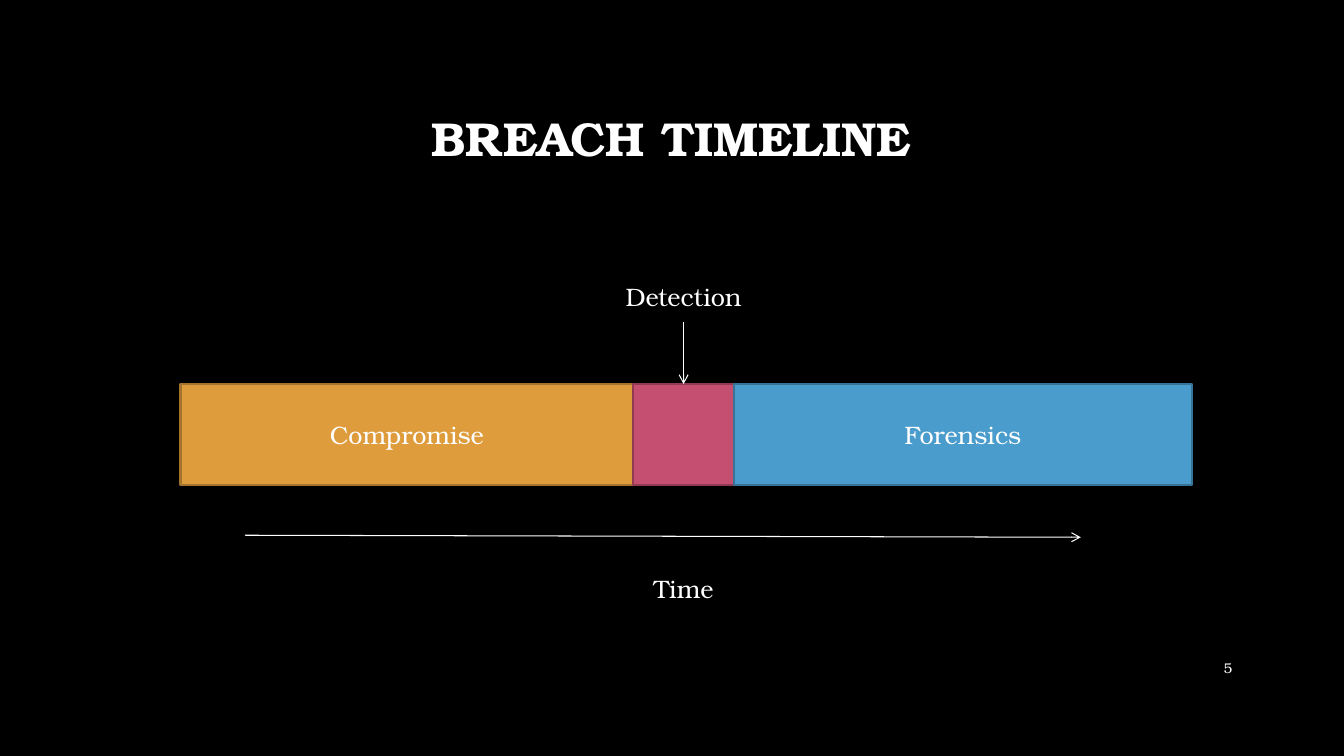
from dataclasses import dataclass
from itertools import accumulate

from lxml.etree import SubElement
from pptx import Presentation
from pptx.dml.color import RGBColor
from pptx.enum.shapes import MSO_CONNECTOR, MSO_SHAPE
from pptx.enum.text import MSO_ANCHOR, PP_ALIGN
from pptx.oxml.ns import qn
from pptx.shapes.autoshape import Shape
from pptx.shapes.connector import Connector
from pptx.slide import Slide
from pptx.util import Emu, Pt

PX_PER_INCH = 100
EMU_PER_PX = 914400 // PX_PER_INCH


@dataclass(frozen=True)
class Theme:
    font: str = "TeX Gyre Bonum"
    background: str = "000000"
    foreground: str = "FFFFFF"
    compromise: str = "DE9C3C"
    compromise_edge: str = "A4732C"
    detection: str = "C54F71"
    detection_edge: str = "923A54"
    forensics: str = "4A9CCC"
    forensics_edge: str = "377397"
    title_size: float = 34
    label_size: float = 18
    number_size: float = 10
    edge_width: float = 1.5
    arrow_width: float = 0.75


@dataclass(frozen=True)
class Box:
    left: int
    top: int
    width: int
    height: int

    def emu(self) -> tuple[Emu, ...]:
        return tuple(map(px, (self.left, self.top, self.width, self.height)))


@dataclass(frozen=True)
class Label:
    text: str
    box: Box
    size: float
    align: PP_ALIGN = PP_ALIGN.CENTER
    anchor: MSO_ANCHOR = MSO_ANCHOR.TOP
    bold: bool = False
    line_spacing: float = 1.0


@dataclass(frozen=True)
class Phase:
    text: str
    width: int
    fill: str
    edge: str


@dataclass(frozen=True)
class Arrow:
    start: tuple[int, int]
    end: tuple[int, int]


THEME = Theme()
BAR_LEFT, BAR_TOP, BAR_HEIGHT = 179, 381, 100

PHASES = (
    Phase("Compromise", 449, THEME.compromise, THEME.compromise_edge),
    Phase("", 100, THEME.detection, THEME.detection_edge),
    Phase("Forensics", 454, THEME.forensics, THEME.forensics_edge),
)
LABELS = (
    Label("BREACH TIMELINE", Box(100, 67, 1132, 145), THEME.title_size,
          anchor=MSO_ANCHOR.MIDDLE, bold=True, line_spacing=0.9),
    Label("5", Box(1150, 643, 82, 40), THEME.number_size,
          align=PP_ALIGN.RIGHT, anchor=MSO_ANCHOR.MIDDLE),
    Label("Time", Box(609, 564, 138, 40), THEME.label_size),
    Label("Detection", Box(595, 274, 166, 40), THEME.label_size),
)
DETECTION_ARROW = Arrow((678, 319), (678, BAR_TOP))
TIME_ARROW = Arrow((243, 531), (1072, 533))


def px(length: int) -> Emu:
    return Emu(length * EMU_PER_PX)


def rgb(color: str) -> RGBColor:
    return RGBColor.from_string(color)


def write_text(holder: Shape, label: Label) -> None:
    frame = holder.text_frame
    paragraph = frame.paragraphs[0]
    run = paragraph.add_run()
    run.text = label.text
    run.font.color.rgb = rgb(THEME.foreground)
    formats = {
        frame: {"word_wrap": True, "vertical_anchor": label.anchor},
        paragraph: {"alignment": label.align, "line_spacing": label.line_spacing},
        run.font: {"name": THEME.font, "size": Pt(label.size), "bold": label.bold},
    }
    for target, values in formats.items():
        for attribute, value in values.items():
            setattr(target, attribute, value)


def draw_label(slide: Slide, label: Label) -> None:
    write_text(slide.shapes.add_textbox(*label.box.emu()), label)


def draw_phase(slide: Slide, phase: Phase, left: int) -> Shape:
    box = Box(left, BAR_TOP, phase.width, BAR_HEIGHT)
    segment = slide.shapes.add_shape(MSO_SHAPE.RECTANGLE, *box.emu())
    segment.shadow.inherit = False
    segment.fill.solid()
    segment.fill.fore_color.rgb = rgb(phase.fill)
    segment.line.color.rgb = rgb(phase.edge)
    segment.line.width = Pt(THEME.edge_width)
    if phase.text:
        write_text(segment, Label(phase.text, box, THEME.label_size,
                                  anchor=MSO_ANCHOR.MIDDLE))
    return segment


def draw_arrow(slide: Slide, arrow: Arrow) -> Connector:
    connector = slide.shapes.add_connector(
        MSO_CONNECTOR.STRAIGHT, *map(px, arrow.start + arrow.end))
    connector.line.color.rgb = rgb(THEME.foreground)
    connector.line.width = Pt(THEME.arrow_width)
    SubElement(connector.line._get_or_add_ln(), qn("a:tailEnd"), type="arrow")
    SubElement(connector._element.spPr, qn("a:effectLst"))
    return connector


def main() -> None:
    presentation = Presentation()
    presentation.slide_width = px(1333)
    presentation.slide_height = px(750)
    slide = presentation.slides.add_slide(presentation.slide_layouts[6])
    slide.background.fill.solid()
    slide.background.fill.fore_color.rgb = rgb(THEME.background)

    lefts = accumulate((phase.width for phase in PHASES), initial=BAR_LEFT)
    compromise, detection, forensics = [
        draw_phase(slide, phase, left) for phase, left in zip(PHASES, lefts)]
    draw_arrow(slide, DETECTION_ARROW).end_connect(detection, 0)
    draw_arrow(slide, TIME_ARROW)
    for label in LABELS:
        draw_label(slide, label)
    presentation.save("out.pptx")


if __name__ == "__main__":
    main()
